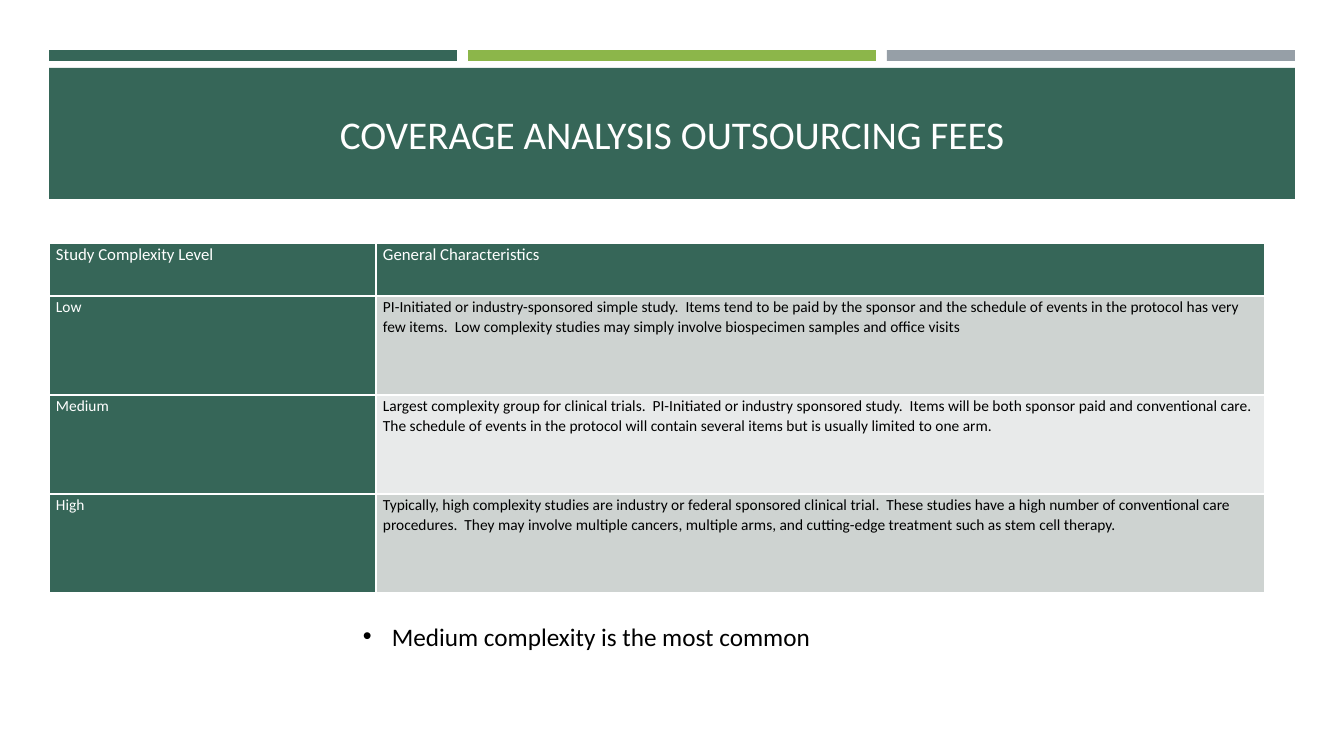
from dataclasses import dataclass

from lxml.etree import SubElement
from pptx import Presentation
from pptx.dml.color import RGBColor
from pptx.enum.shapes import MSO_SHAPE
from pptx.enum.text import MSO_ANCHOR, PP_ALIGN
from pptx.oxml.ns import qn
from pptx.shapes.autoshape import Shape
from pptx.slide import Slide
from pptx.table import _Cell
from pptx.text.text import _Paragraph
from pptx.util import Emu, Pt


@dataclass(frozen=True)
class Theme:
    font: str = "Calibri"
    green: str = "366658"
    lime: str = "8CB64A"
    grey: str = "969FA7"
    band_dark: str = "CED3D1"
    band_light: str = "E8EAEA"
    white: str = "FFFFFF"
    black: str = "000000"
    title_size: int = 28
    note_size: int = 18
    header_size: int = 12
    body_size: int = 11


@dataclass(frozen=True)
class Box:
    left: int
    top: int
    width: int
    height: int

    def emu(self) -> tuple[Emu, Emu, Emu, Emu]:
        return px(self.left), px(self.top), px(self.width), px(self.height)


@dataclass(frozen=True)
class Level:
    name: str
    characteristics: str
    band: str


THEME = Theme()
EMU_PER_PX = 914400 / 100.8
SLIDE_WIDTH, SLIDE_HEIGHT = 1344, 756
BANNER = Box(49, 68, 1246, 131)
STRIPE = Box(49, 50, 408, 11)
STRIPE_PITCH = 419
STRIPE_COLORS = (THEME.green, THEME.lime, THEME.grey)
FEES = Box(49, 243, 1216, 349)
COLUMN_WIDTHS = (327, 889)
HEADER_HEIGHT, LEVEL_HEIGHT = 53, 99
CELL_INSET = 7
NOTE = Box(316, 616, 672, 40)
NOTE_MARGIN, NOTE_HANGING = 66, 29

TITLE = "COVERAGE ANALYSIS OUTSOURCING FEES"
HEADINGS = ("Study Complexity Level", "General Characteristics")
LEVELS = (
    Level(
        "Low",
        "PI-Initiated or industry-sponsored simple study.  Items tend to be paid by "
        "the sponsor and the schedule of events in the protocol has very few items.  "
        "Low complexity studies may simply involve biospecimen samples and office visits",
        THEME.band_dark,
    ),
    Level(
        "Medium",
        "Largest complexity group for clinical trials.  PI-Initiated or industry "
        "sponsored study.  Items will be both sponsor paid and conventional care.  "
        "The schedule of events in the protocol will contain several items but is "
        "usually limited to one arm.",
        THEME.band_light,
    ),
    Level(
        "High",
        "Typically, high complexity studies are industry or federal sponsored clinical "
        "trial.  These studies have a high number of conventional care procedures.  "
        "They may involve multiple cancers, multiple arms, and cutting-edge treatment "
        "such as stem cell therapy.",
        THEME.band_dark,
    ),
)
NOTE_TEXT = "Medium complexity is the most common"


def px(length: int) -> Emu:
    return Emu(round(length * EMU_PER_PX))


def write(paragraph: _Paragraph, text: str, size: int, color: str) -> None:
    paragraph.text = text
    paragraph.font.name = THEME.font
    paragraph.font.size = Pt(size)
    paragraph.font.bold = False
    paragraph.font.color.rgb = RGBColor.from_string(color)


def add_bar(slide: Slide, box: Box, color: str) -> Shape:
    bar = slide.shapes.add_shape(MSO_SHAPE.RECTANGLE, *box.emu())
    bar.shadow.inherit = False
    bar.fill.solid()
    bar.fill.fore_color.rgb = RGBColor.from_string(color)
    bar.line.fill.background()
    return bar


def add_banner(slide: Slide) -> None:
    for index, color in enumerate(STRIPE_COLORS):
        left = STRIPE.left + index * STRIPE_PITCH
        add_bar(slide, Box(left, STRIPE.top, STRIPE.width, STRIPE.height), color)
    banner = add_bar(slide, BANNER, THEME.green)
    banner.text_frame.vertical_anchor = MSO_ANCHOR.MIDDLE
    heading = banner.text_frame.paragraphs[0]
    heading.alignment = PP_ALIGN.CENTER
    write(heading, TITLE, THEME.title_size, THEME.white)


def add_borders(cell: _Cell) -> None:
    properties = cell._tc.get_or_add_tcPr()
    for position, side in enumerate(("lnL", "lnR", "lnT", "lnB")):
        border = properties.makeelement(qn(f"a:{side}"), {"w": str(Pt(1))})
        fill = SubElement(border, qn("a:solidFill"))
        SubElement(fill, qn("a:srgbClr"), val=THEME.white)
        properties.insert(position, border)


def fill_cell(cell: _Cell, text: str, size: int, color: str, fill: str) -> None:
    cell.margin_left = cell.margin_right = px(CELL_INSET)
    cell.margin_top = cell.margin_bottom = 0
    cell.fill.solid()
    cell.fill.fore_color.rgb = RGBColor.from_string(fill)
    add_borders(cell)
    paragraph = cell.text_frame.paragraphs[0]
    paragraph.line_spacing = 1.07
    write(paragraph, text, size, color)


def add_fees(slide: Slide) -> None:
    rows = len(LEVELS) + 1
    fees = slide.shapes.add_table(rows, len(HEADINGS), *FEES.emu()).table
    for column, width in zip(fees.columns, COLUMN_WIDTHS):
        column.width = px(width)
    for index, row in enumerate(fees.rows):
        row.height = px(LEVEL_HEIGHT if index else HEADER_HEIGHT)
    for column, heading in enumerate(HEADINGS):
        fill_cell(fees.cell(0, column), heading, THEME.header_size, THEME.white, THEME.green)
    for row, level in enumerate(LEVELS, start=1):
        fill_cell(fees.cell(row, 0), level.name, THEME.body_size, THEME.white, THEME.green)
        fill_cell(
            fees.cell(row, 1), level.characteristics, THEME.body_size, THEME.black, level.band
        )


def add_note(slide: Slide) -> None:
    frame = slide.shapes.add_textbox(*NOTE.emu()).text_frame
    frame.word_wrap = True
    note = frame.paragraphs[0]
    write(note, NOTE_TEXT, THEME.note_size, THEME.black)
    properties = note._p.get_or_add_pPr()
    properties.set("marL", str(px(NOTE_MARGIN)))
    properties.set("indent", str(-px(NOTE_HANGING)))
    bullet_font = properties.makeelement(qn("a:buFont"), {"typeface": "Arial"})
    bullet = properties.makeelement(qn("a:buChar"), {"char": "•"})
    properties.insert(0, bullet_font)
    properties.insert(1, bullet)


def main() -> None:
    presentation = Presentation()
    presentation.slide_width = px(SLIDE_WIDTH)
    presentation.slide_height = px(SLIDE_HEIGHT)
    slide = presentation.slides.add_slide(presentation.slide_layouts[6])
    add_banner(slide)
    add_fees(slide)
    add_note(slide)
    presentation.save("out.pptx")


if __name__ == "__main__":
    main()
